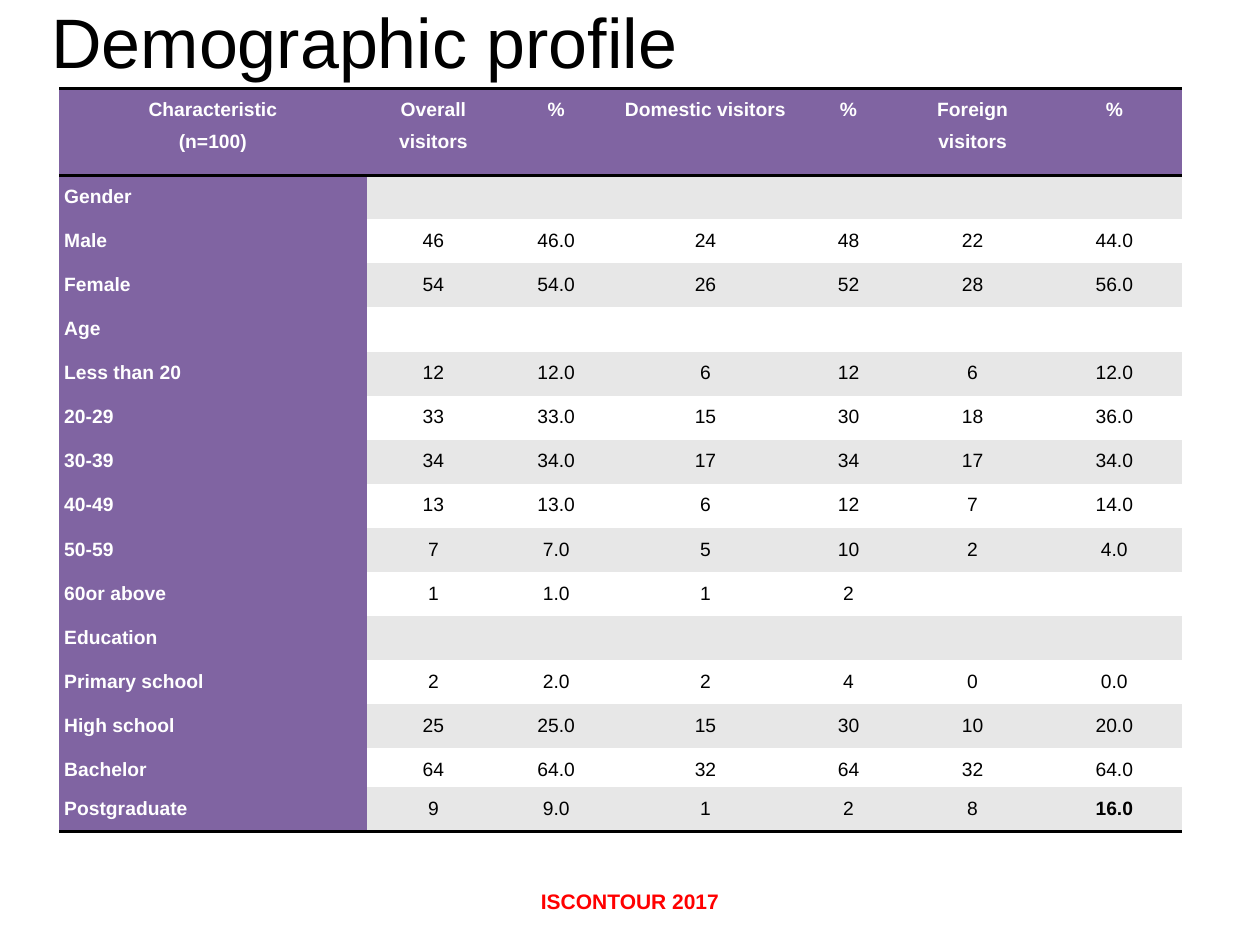
from lxml.etree import SubElement
from pptx import Presentation
from pptx.dml.color import RGBColor
from pptx.enum.text import MSO_ANCHOR, PP_ALIGN
from pptx.oxml.ns import qn
from pptx.util import Inches, Pt

COLORS = {
    "purple": "8064A2",
    "grey": "E7E7E7",
    "white": "FFFFFF",
    "black": "000000",
    "red": "FF0000",
}
NO_STYLE = "{2D5ABB26-0587-4C30-8999-92F81FD0307C}"


def add_text(paragraph, text, size, color, bold=False, align=PP_ALIGN.LEFT):
    paragraph.alignment = align
    run = paragraph.add_run()
    run.text = text
    run.font.name = "Arial"
    run.font.size = Pt(size)
    run.font.bold = bold
    run.font.color.rgb = RGBColor.from_string(COLORS[color])


def add_border(cell, side):
    line = SubElement(cell._tc.get_or_add_tcPr(), qn(f"a:{side}"), w=str(Pt(2)))
    fill = SubElement(line, qn("a:solidFill"))
    SubElement(fill, qn("a:srgbClr"), val=COLORS["black"])


prs = Presentation()
prs.slide_width = Inches(10)
prs.slide_height = Inches(7.5)
slide = prs.slides.add_slide(prs.slide_layouts[6])

footer = slide.shapes.add_textbox(Inches(3.19), Inches(7), Inches(3.62), Inches(0.3)).text_frame
footer.word_wrap = True
add_text(footer.paragraphs[0], "ISCONTOUR 2017", 12, "red", True, PP_ALIGN.CENTER)

profile = [
    ["Characteristic\n(n=100)", "Overall visitors", "%", "Domestic visitors", "%", "Foreign visitors", "%"],
    ["Gender", "", "", "", "", "", ""],
    ["Male", "46", "46.0", "24", "48", "22", "44.0"],
    ["Female", "54", "54.0", "26", "52", "28", "56.0"],
    ["Age", "", "", "", "", "", ""],
    ["Less than 20", "12", "12.0", "6", "12", "6", "12.0"],
    ["20-29", "33", "33.0", "15", "30", "18", "36.0"],
    ["30-39", "34", "34.0", "17", "34", "17", "34.0"],
    ["40-49", "13", "13.0", "6", "12", "7", "14.0"],
    ["50-59", "7", "7.0", "5", "10", "2", "4.0"],
    ["60or above", "1", "1.0", "1", "2", "", ""],
    ["Education", "", "", "", "", "", ""],
    ["Primary school", "2", "2.0", "2", "4", "0", "0.0"],
    ["High school", "25", "25.0", "15", "30", "10", "20.0"],
    ["Bachelor", "64", "64.0", "32", "64", "32", "64.0"],
    ["Postgraduate", "9", "9.0", "1", "2", "8", "16.0"],
]
column_widths = [2.44, 1.06, 0.89, 1.48, 0.79, 1.18, 1.07]
row_heights = [0.69] + [0.35] * 13 + [0.31, 0.35]
last_row = len(profile) - 1
last_column = len(column_widths) - 1

table = slide.shapes.add_table(
    len(profile), len(column_widths), Inches(0.47), Inches(0.7), Inches(8.92), Inches(5.92)
).table
table._tbl.tblPr.find(qn("a:tableStyleId")).text = NO_STYLE
table.first_row = True
table.first_col = True
table.horz_banding = False
for column, width in zip(table.columns, column_widths):
    column.width = Inches(width)
for row, height in zip(table.rows, row_heights):
    row.height = Inches(height)

for r, values in enumerate(profile):
    for c, value in enumerate(values):
        cell = table.cell(r, c)
        heading = r == 0 or c == 0
        cell.margin_left = cell.margin_right = Inches(0.04)
        cell.margin_top = cell.margin_bottom = 0
        if r == 0:
            add_border(cell, "lnT")
        if r in (0, last_row):
            add_border(cell, "lnB")
        band = "grey" if r % 2 else "white"
        cell.fill.solid()
        cell.fill.fore_color.rgb = RGBColor.from_string(COLORS["purple" if heading else band])
        if not value:
            continue
        for i, line in enumerate(value.split("\n")):
            paragraph = cell.text_frame.add_paragraph() if i else cell.text_frame.paragraphs[0]
            paragraph.line_spacing = 1.5
            add_text(
                paragraph,
                line,
                11,
                "white" if heading else "black",
                heading or (r, c) == (last_row, last_column),
                PP_ALIGN.LEFT if c == 0 and r else PP_ALIGN.CENTER,
            )

title = slide.shapes.add_textbox(Inches(0.31), Inches(-0.55), Inches(9), Inches(1.25)).text_frame
title.word_wrap = True
title.vertical_anchor = MSO_ANCHOR.BOTTOM
add_text(title.paragraphs[0], "Demographic profile", 40, "black")

prs.save("out.pptx")
